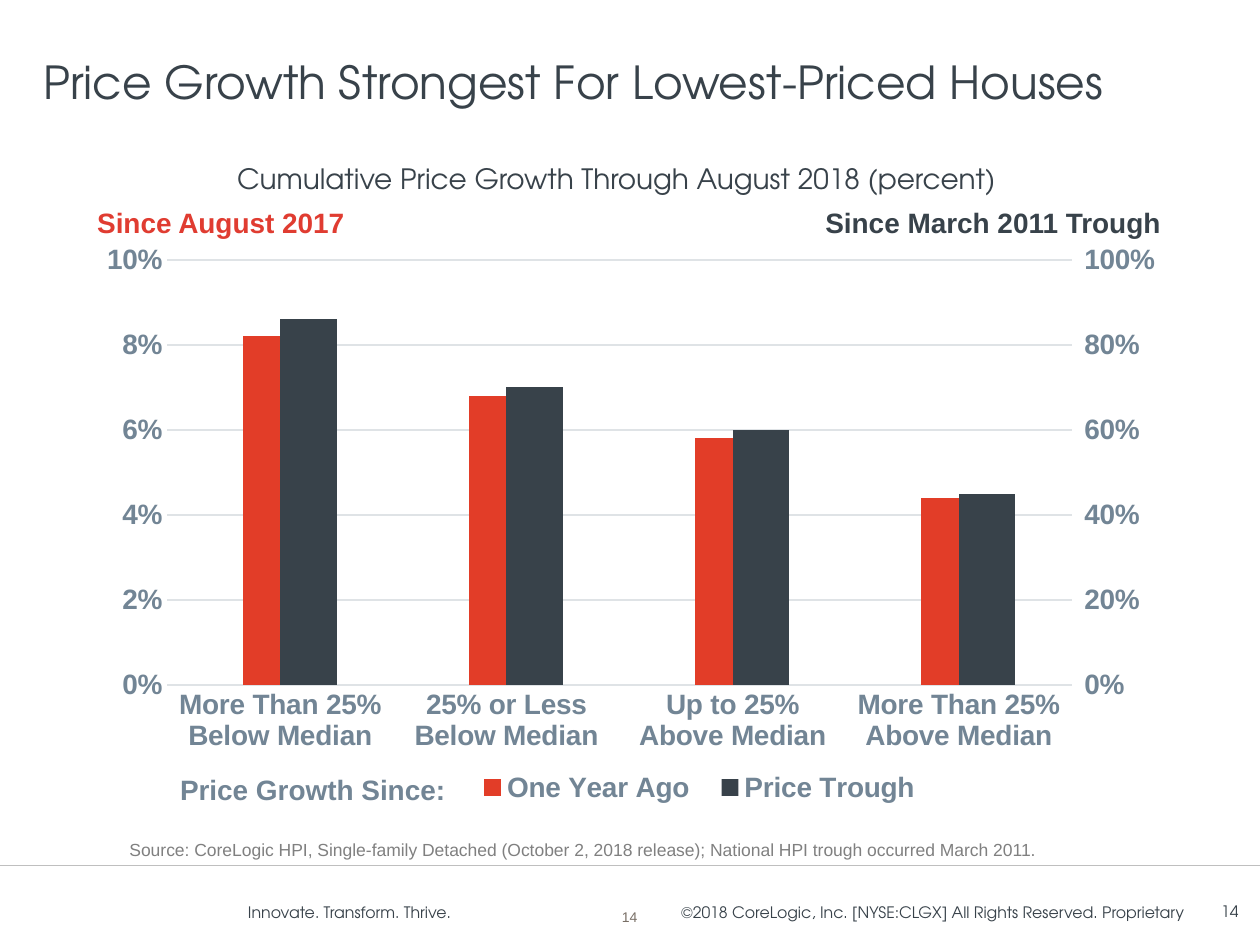
"""Build the slide on cumulative price growth by house price tier."""
from copy import deepcopy

from lxml.etree import SubElement
from pptx import Presentation
from pptx.chart.data import CategoryChartData
from pptx.dml.color import RGBColor
from pptx.enum.chart import XL_CHART_TYPE, XL_LEGEND_POSITION, XL_TICK_MARK
from pptx.enum.shapes import MSO_CONNECTOR
from pptx.enum.text import MSO_ANCHOR, PP_ALIGN
from pptx.oxml.ns import qn
from pptx.oxml.xmlchemy import OxmlElement
from pptx.util import Cm, Pt

THEME = {
    "head": "TeX Gyre Adventor", "body": "Arial",
    "dark": "38424A", "red": "E23D28", "label_red": "E03C31", "slate": "728595",
    "grid": "DFE3E6", "rule": "BFBFBF", "grey": "808080", "brown": "796F66",
    "unused": "787B7E",
    "title": 26, "label": 16, "note": 10, "footer": 9, "number": 8,
}
WIDTH, HEIGHT, RULE_Y = 25.4, 19.05, 17.45
DEFAULT_INSETS, TIGHT = (0.25, 0.13, 0.25, 0.13), (0.13, 0.13, 0.13, 0.13)
LEFT, CENTER, RIGHT = PP_ALIGN.LEFT, PP_ALIGN.CENTER, PP_ALIGN.RIGHT
TOP, MIDDLE, BOTTOM = MSO_ANCHOR.TOP, MSO_ANCHOR.MIDDLE, MSO_ANCHOR.BOTTOM

FOOTER = [
    ("©2018 CoreLogic, Inc. [NYSE:CLGX] All Rights Reserved. Proprietary",
     (11.05, 18.06, 13.06, 0.64), "head", "footer", "dark", False, RIGHT, TOP, DEFAULT_INSETS),
    ("14", (22.53, 18.03, 2.69, 0.66),
     "head", "footer", "dark", False, RIGHT, MIDDLE, DEFAULT_INSETS),
    ("Innovate. Transform. Thrive.", (4.62, 18.06, 4.72, 0.64),
     "head", "footer", "dark", False, RIGHT, TOP, DEFAULT_INSETS),
    ("14", (12.01, 17.63, 1.37, 1.02),
     "body", "number", "brown", False, CENTER, BOTTOM, (0, 0.13, 0, 0)),
]
HEADINGS = [
    ("Price Growth Strongest For Lowest-Priced Houses", (0.74, 0.43, 22.56, 1.88),
     "head", "title", "dark", False, LEFT, BOTTOM, TIGHT),
    ("Cumulative Price Growth Through August 2018 (percent)", (4.65, 3.12, 16.31, 1.45),
     "head", "label", "dark", False, LEFT, TOP, TIGHT),
]
CHART_NOTES = [
    ("Price Growth Since:", (3.38, 15.44, 5.92, 0.94),
     "body", "label", "slate", True, LEFT, TOP, DEFAULT_INSETS),
    ("Source: CoreLogic HPI, Single-family Detached (October 2, 2018 release); "
     "National HPI trough occurred March 2011.", (2.36, 16.79, 22.73, 0.69),
     "body", "note", "grey", False, LEFT, TOP, DEFAULT_INSETS),
    ("Since August 2017", (1.83, 4.01, 7.85, 0.84),
     "body", "label", "label_red", True, LEFT, TOP, TIGHT),
    ("Since March 2011 Trough", (16.51, 4.01, 8.05, 0.84),
     "body", "label", "dark", True, LEFT, TOP, TIGHT),
]

CHART_BOX = (1.7, 4.72, 22.02, 11.68)
PLOT_BOX = (3.37, 5.24, 18.24, 8.57)
LEGEND_BOX = (9.3, 15.4, 9.6, 0.95)
TIERS = ["More Than 25% Below Median", "25% or Less Below Median",
         "Up to 25% Above Median", "More Than 25% Above Median"]
SERIES = [
    ("One Year Ago", (0.082, 0.068, 0.058, 0.044), "red"),
    ("Series 2", (None,) * 4, "unused"),
    ("Price Trough", (0.86, 0.7, 0.6, 0.45), "dark"),
]


def rgb(key):
    return RGBColor.from_string(THEME[key])


def set_font(font, face, size, color, bold=False):
    font.name, font.size, font.bold = THEME[face], Pt(THEME[size]), bold
    font.color.rgb = rgb(color)


def add_text(s, text, box, face, size, color, bold, align, anchor, insets):
    tf = s.shapes.add_textbox(*map(Cm, box)).text_frame
    tf.word_wrap, tf.vertical_anchor = True, anchor
    tf.margin_left, tf.margin_top, tf.margin_right, tf.margin_bottom = map(Cm, insets)
    tf.text = text
    p = tf.paragraphs[0]
    p.alignment = align
    set_font(p.runs[0].font, face, size, color, bold)


def add_rule(s):
    ln = s.shapes.add_connector(MSO_CONNECTOR.STRAIGHT, 0, Cm(RULE_Y), Cm(WIDTH), Cm(RULE_Y))
    ln.line.color.rgb, ln.line.width = rgb("rule"), Pt(0.75)
    SubElement(ln.element.spPr, qn("a:effectLst"))


def manual_layout(box, inner=False):
    x, y, w, h = box
    left, top, width, height = CHART_BOX
    layout = OxmlElement("c:layout")
    manual = SubElement(layout, qn("c:manualLayout"))
    values = {"layoutTarget": "inner"} if inner else {}
    values.update(xMode="edge", yMode="edge", x=(x - left) / width, y=(y - top) / height,
                  w=w / width, h=h / height)
    for tag, value in values.items():
        SubElement(manual, qn(f"c:{tag}")).set("val", str(value))
    return layout


def style_axis(axis):
    axis.major_tick_mark = axis.minor_tick_mark = XL_TICK_MARK.NONE
    set_font(axis.tick_labels.font, "body", "label", "slate", True)


def set_values(element, **values):
    for tag, value in values.items():
        element.find(qn(f"c:{tag}")).set("val", value)


def add_right_axis(chart):
    plot_area = chart.element.xpath("c:chart/c:plotArea")[0]
    bars, cat, val = (plot_area.find(qn(f"c:{t}")) for t in ("barChart", "catAx", "valAx"))
    right_bars, right_cat, right_val = map(deepcopy, (bars, cat, val))
    for ser in bars.findall(qn("c:ser"))[1:]:
        bars.remove(ser)
    right_bars.remove(right_bars.find(qn("c:ser")))
    for ax_id, value in zip(right_bars.findall(qn("c:axId")), ("50010", "50020")):
        ax_id.set("val", value)
    set_values(right_cat, axId="50010", crossAx="50020", delete="1")
    set_values(right_val, axId="50020", crossAx="50010", axPos="r", crosses="max",
               majorTickMark="cross", majorUnit="0.2")
    set_values(right_val.find(qn("c:scaling")), max="1")
    right_val.remove(right_val.find(qn("c:majorGridlines")))
    bars.addnext(right_bars)
    val.addnext(right_val)
    right_val.addnext(right_cat)
    for old in plot_area.findall(qn("c:layout")):
        plot_area.remove(old)
    plot_area.insert(0, manual_layout(PLOT_BOX, inner=True))


def add_legend(chart):
    chart.has_legend = True
    legend = chart.legend
    legend.position, legend.include_in_layout = XL_LEGEND_POSITION.BOTTOM, False
    set_font(legend.font, "body", "label", "slate", True)
    element = chart.element.xpath("c:chart/c:legend")[0]
    for old in element.findall(qn("c:layout")):
        element.remove(old)
    entry = OxmlElement("c:legendEntry")
    SubElement(entry, qn("c:idx")).set("val", "1")
    SubElement(entry, qn("c:delete")).set("val", "1")
    element.find(qn("c:legendPos")).addnext(entry)
    entry.addnext(manual_layout(LEGEND_BOX))


def add_growth_chart(s):
    data = CategoryChartData(number_format="0%")
    data.categories = TIERS
    for name, values, _ in SERIES:
        data.add_series(name, values)
    chart = s.shapes.add_chart(XL_CHART_TYPE.COLUMN_CLUSTERED, *map(Cm, CHART_BOX), data).chart
    chart.has_title = False
    set_font(chart.font, "body", "note", "dark")
    plot = chart.plots[0]
    plot.gap_width, plot.overlap, plot.vary_by_categories = 200, 0, False
    for ser, (_, _, color) in zip(plot.series, SERIES):
        ser.format.fill.solid()
        ser.format.fill.fore_color.rgb = rgb(color)
    cat, val = chart.category_axis, chart.value_axis
    for axis in (cat, val):
        style_axis(axis)
    val.minimum_scale, val.maximum_scale, val.major_unit = 0, 0.1, 0.02
    val.tick_labels.number_format, val.tick_labels.number_format_is_linked = "0%", False
    val.format.line.fill.background()
    for line in (cat.format.line, val.major_gridlines.format.line):
        line.color.rgb, line.width = rgb("grid"), Pt(0.75)
    add_right_axis(chart)
    add_legend(chart)


def main():
    prs = Presentation()
    prs.slide_width, prs.slide_height = Cm(WIDTH), Cm(HEIGHT)
    s = prs.slides.add_slide(prs.slide_layouts[6])
    add_rule(s)
    for item in FOOTER + HEADINGS:
        add_text(s, *item)
    add_growth_chart(s)
    for item in CHART_NOTES:
        add_text(s, *item)
    prs.save("out.pptx")


if __name__ == "__main__":
    main()
